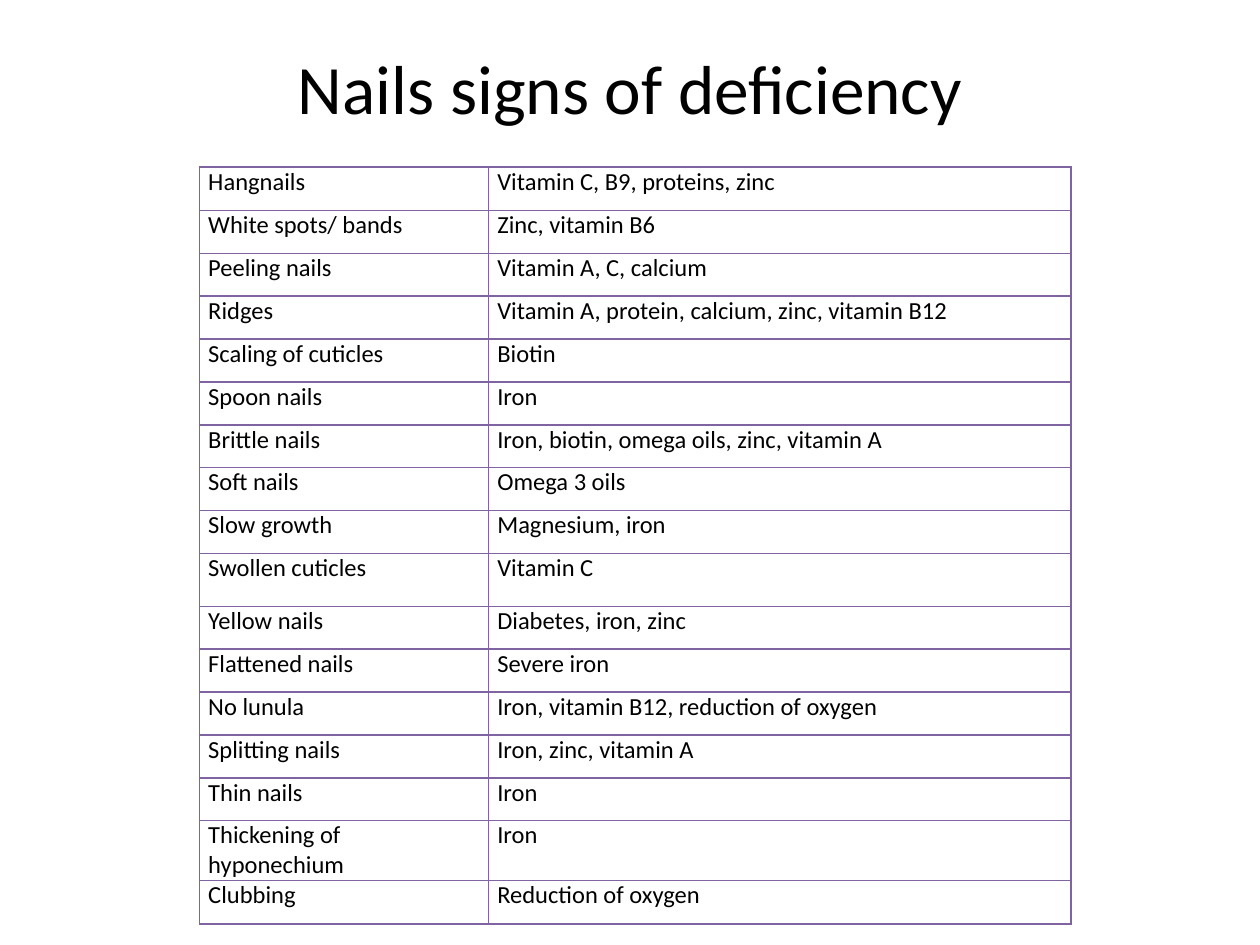
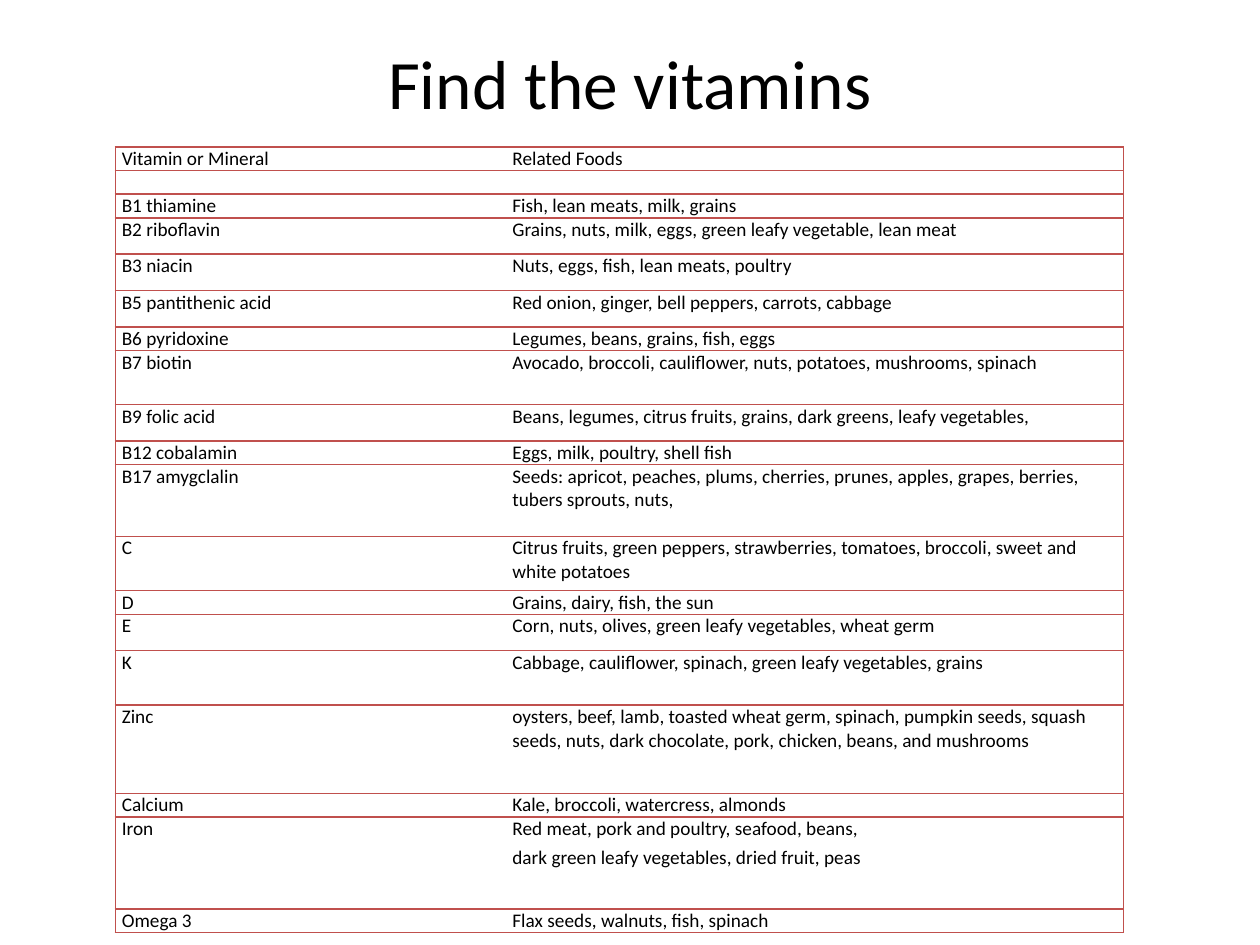
from dataclasses import dataclass

from lxml.etree import SubElement
from pptx import Presentation
from pptx.dml.color import RGBColor
from pptx.enum.text import MSO_ANCHOR as Anchor, PP_ALIGN as Align
from pptx.oxml.ns import qn
from pptx.util import Pt


@dataclass(frozen=True)
class Theme:
    font: str = "Calibri"
    ink: str = "000000"
    paper: str = "FFFFFF"
    purple: str = "8064A2"
    red: str = "C0504D"
    title_size: float = 39.6
    nail_size: float = 14
    food_size: float = 11
    border: float = 1


THEME = Theme()
PAGE_WIDTH, PAGE_HEIGHT = 720, 540
TITLE_LEFT, TITLE_TOP = 36, 21.6

NAIL_ROW, NAIL_EDGE_ROW = 24.5, 25
LINE, SHORT, MEDIUM, TALL = 13.5, 20.8, 31, 41

NAIL_SIGNS = [
    ("Hangnails", "Vitamin C, B9, proteins, zinc", NAIL_EDGE_ROW),
    ("White spots/ bands", "Zinc, vitamin B6", NAIL_ROW),
    ("Peeling nails", "Vitamin A, C, calcium", NAIL_ROW),
    ("Ridges", "Vitamin A, protein, calcium, zinc, vitamin B12", NAIL_ROW),
    ("Scaling of cuticles", "Biotin", NAIL_ROW),
    ("Spoon nails", "Iron", NAIL_ROW),
    ("Brittle nails", "Iron, biotin, omega oils, zinc, vitamin A", NAIL_ROW),
    ("Soft nails", "Omega 3 oils", NAIL_ROW),
    ("Slow growth", "Magnesium, iron", NAIL_ROW),
    ("Swollen cuticles", "Vitamin C", 30.3),
    ("Yellow nails", "Diabetes, iron, zinc", NAIL_ROW),
    ("Flattened nails", "Severe iron", NAIL_ROW),
    ("No lunula", "Iron, vitamin B12, reduction of oxygen", NAIL_ROW),
    ("Splitting nails", "Iron, zinc, vitamin A", NAIL_ROW),
    ("Thin nails", "Iron", NAIL_ROW),
    ("Thickening of hyponechium", "Iron", 34.2),
    ("Clubbing", "Reduction of oxygen", NAIL_EDGE_ROW),
]

VITAMIN_FOODS = [
    ("Vitamin or Mineral", "Related Foods", LINE),
    ("", "", LINE),
    ("B1 thiamine", "Fish, lean meats, milk, grains", LINE),
    ("B2 riboflavin", "Grains, nuts, milk, eggs, green leafy vegetable, lean meat", SHORT),
    ("B3 niacin", "Nuts, eggs, fish, lean meats, poultry", SHORT),
    ("B5 pantithenic acid", "Red onion, ginger, bell peppers, carrots, cabbage", SHORT),
    ("B6 pyridoxine", "Legumes, beans, grains, fish, eggs", LINE),
    ("B7 biotin", "Avocado, broccoli, cauliflower, nuts, potatoes, mushrooms, spinach", MEDIUM),
    ("B9 folic acid", "Beans, legumes, citrus fruits, grains, dark greens, leafy vegetables,", SHORT),
    ("B12 cobalamin", "Eggs, milk, poultry, shell fish", LINE),
    ("B17 amygclalin", "Seeds: apricot, peaches, plums, cherries, prunes, apples, grapes, "
     "berries, tubers sprouts, nuts,", TALL),
    ("C", "Citrus fruits, green peppers, strawberries, tomatoes, broccoli, "
     "sweet and white potatoes", MEDIUM),
    ("D", "Grains, dairy, fish, the sun", LINE),
    ("E", "Corn, nuts, olives, green leafy vegetables, wheat germ", SHORT),
    ("K", "Cabbage, cauliflower, spinach, green leafy vegetables, grains", MEDIUM),
    ("Zinc", "oysters, beef, lamb, toasted wheat germ, spinach, pumpkin seeds, "
     "squash seeds, nuts, dark chocolate, pork, chicken, beans, and mushrooms", 50.6),
    ("Calcium", "Kale, broccoli, watercress, almonds", LINE),
    ("Iron", "Red meat, pork and poultry, seafood, beans,\n"
     "dark green leafy vegetables, dried fruit, peas", 52.6),
    ("Omega 3", "Flax seeds, walnuts, fish, spinach", LINE),
]

PAGES = [
    dict(title="Nails signs of deficiency", title_height=56.2, rows=NAIL_SIGNS,
         left=114, top=95.3, widths=(165.2, 332.8), size=THEME.nail_size, inset=5,
         color=THEME.purple, sides=("LRTB", "LRTB"), fill=None),
    dict(title="Find the vitamins", title_height=50.4, rows=VITAMIN_FOODS,
         left=66, top=84, widths=(223.2, 352.8), size=THEME.food_size, inset=3.6,
         color=THEME.red, sides=("LTB", "RTB"), fill=THEME.paper),
]


def write_text(frame, text, *, size, align=Align.LEFT, after=0):
    lines = text.split("\n")
    for index, line in enumerate(lines):
        para = frame.add_paragraph() if index else frame.paragraphs[0]
        para.alignment = align
        if index < len(lines) - 1:
            para.space_after = Pt(after)
        if line:
            span = para.add_run()
            span.text = line
            span.font.name = THEME.font
            span.font.size = Pt(size)
            span.font.bold = False
            span.font.color.rgb = RGBColor.from_string(THEME.ink)
        else:
            SubElement(para._p, qn("a:endParaRPr"), sz=str(size * 100))


def draw_borders(cell, sides, color):
    properties = cell._tc.get_or_add_tcPr()
    for side in "LRTB":
        line = SubElement(properties, qn(f"a:ln{side}"), w=str(Pt(THEME.border)))
        if side in sides:
            fill = SubElement(line, qn("a:solidFill"))
            SubElement(fill, qn("a:srgbClr"), val=color)
        else:
            SubElement(line, qn("a:noFill"))


def add_title(page, text, height):
    box = page.shapes.add_textbox(Pt(TITLE_LEFT), Pt(TITLE_TOP),
                                  Pt(PAGE_WIDTH - 2 * TITLE_LEFT), Pt(height))
    frame = box.text_frame
    frame.word_wrap = True
    frame.vertical_anchor = Anchor.MIDDLE
    write_text(frame, text, size=THEME.title_size, align=Align.CENTER)


def add_grid(page, *, rows, left, top, widths, size, inset, color, sides, fill):
    height = sum(row[-1] for row in rows)
    table = page.shapes.add_table(len(rows), len(widths), Pt(left), Pt(top),
                                  Pt(sum(widths)), Pt(height)).table
    table.first_row = table.horz_banding = False
    for column, width in zip(table.columns, widths):
        column.width = Pt(width)
    for row, (*texts, row_height) in zip(table.rows, rows):
        row.height = Pt(row_height)
        for cell, text, cell_sides in zip(row.cells, texts, sides):
            cell.margin_left = cell.margin_right = Pt(inset)
            cell.margin_top = cell.margin_bottom = 0
            draw_borders(cell, cell_sides, color)
            if fill:
                cell.fill.solid()
                cell.fill.fore_color.rgb = RGBColor.from_string(fill)
            else:
                cell.fill.background()
            write_text(cell.text_frame, text, size=size, after=3)


def main():
    deck = Presentation()
    deck.slide_width, deck.slide_height = Pt(PAGE_WIDTH), Pt(PAGE_HEIGHT)
    for content in PAGES:
        page = deck.slides.add_slide(deck.slide_layouts[6])
        grid = dict(content)
        add_title(page, grid.pop("title"), grid.pop("title_height"))
        add_grid(page, **grid)
    deck.save("out.pptx")


if __name__ == "__main__":
    main()
